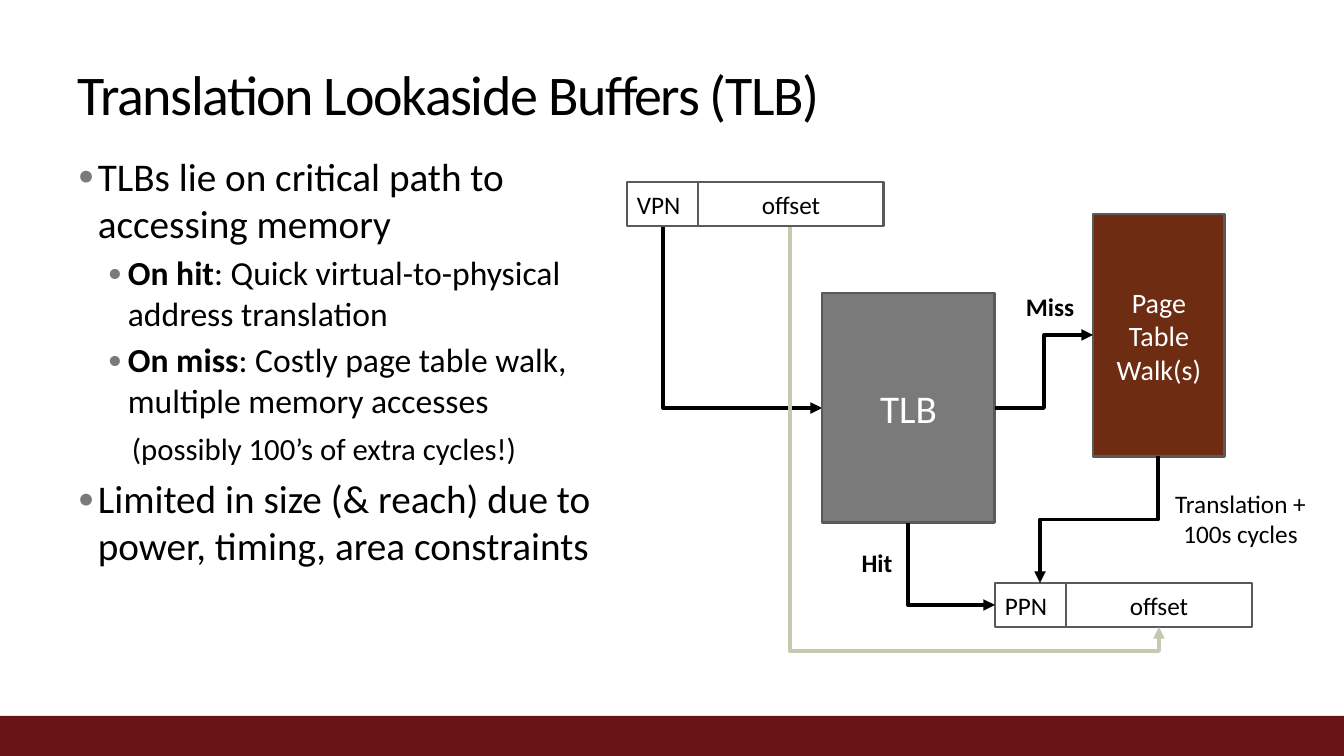
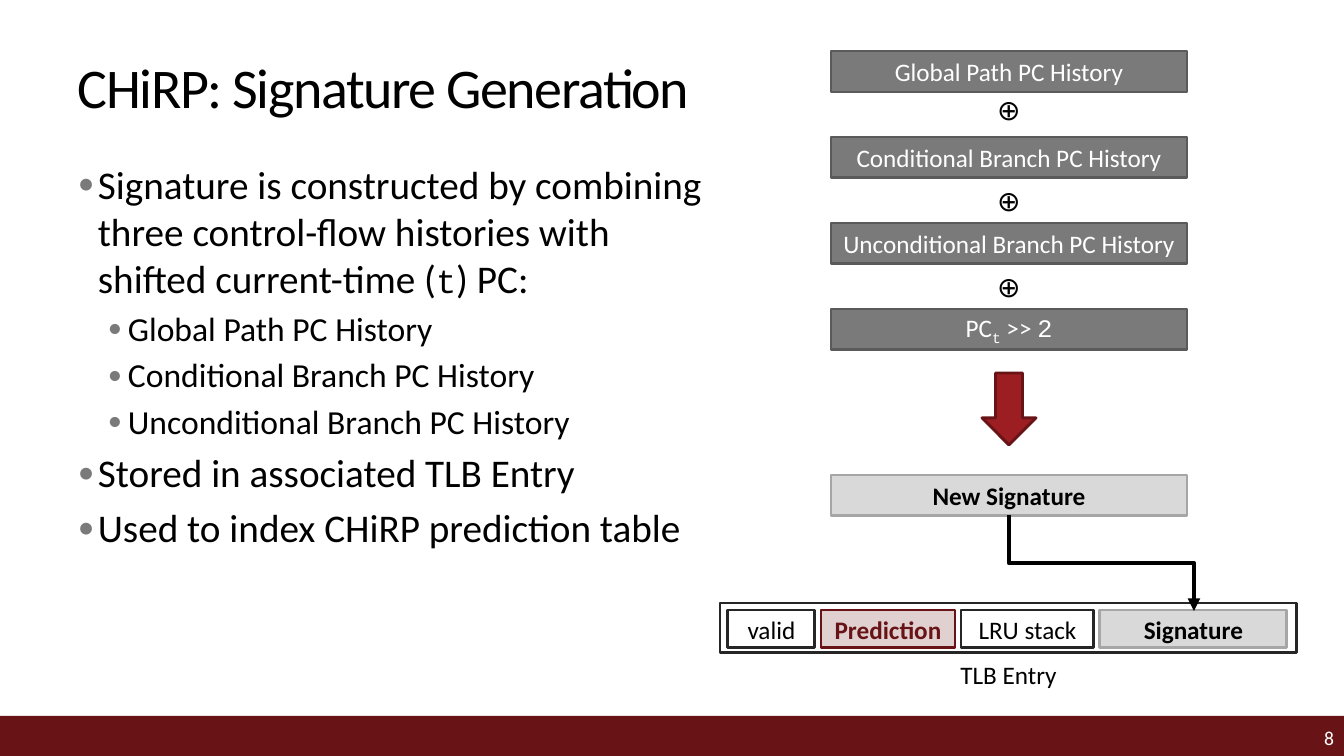
import pptx
import pptx.util
import pptx.dml.color
import pptx.enum.shapes
import pptx.enum.text
import pptx.oxml.ns
from lxml import etree

SCALE = 914400 / 100.8
WIDE, HIGH = 1344, 756
FONT, MONO = "Calibri", "Courier New"
EDGE = 2.08
LEFT = 68
INK = {
    "black": "000000",
    "white": "FFFFFF",
    "band": "681417",
    "gray": "7A7A7A",
    "edge": "5A5A5A",
    "rust": "6E2C12",
    "sand": "C8C8B1",
    "red": "9D1E22",
    "pale": "D9D9D9",
    "rim": "A6A6A6",
    "dark": "262626",
}
SHAPE = pptx.enum.shapes.MSO_SHAPE
ALIGN = pptx.enum.text.PP_ALIGN
MIDDLE = pptx.enum.text.MSO_ANCHOR.MIDDLE
qn = pptx.oxml.ns.qn
Pt = pptx.util.Pt


def px(n):
    return round(n * SCALE)


def hue(name):
    return pptx.dml.color.RGBColor.from_string(INK[name])


def child(node, tag, **attrs):
    return etree.SubElement(node, qn(tag), attrs)


def style(para, size, color="black", bold=False, align=ALIGN.LEFT):
    para.alignment = align
    font = para.font
    font.name, font.size, font.bold = FONT, Pt(size), bold
    font.color.rgb = hue(color)


def fill_runs(para, parts):
    if isinstance(parts, str):
        parts = [(parts, "")]
    for text, mark in parts:
        run = para.add_run()
        run.text = text
        if mark == "bold":
            run.font.bold = True
        elif mark in ("mono", "sub", "code"):
            run.font.name = MONO
            if mark == "code":
                run.font.size = Pt(24)
            elif mark == "sub":
                run.font._element.set("baseline", "-25000")


def label(slide, box, text, size=18, color="black", bold=False, align=ALIGN.CENTER):
    frame = slide.shapes.add_textbox(*map(px, box)).text_frame
    frame.word_wrap = True
    para = frame.paragraphs[0]
    fill_runs(para, text)
    style(para, size, color, bold, align)
    return frame


def block(slide, box, lines=(), fill="white", edge="edge", color="black", size=18,
          bold=False, align=ALIGN.CENTER, kind=SHAPE.RECTANGLE):
    shape = slide.shapes.add_shape(kind, *map(px, box))
    shape.shadow.inherit = False
    shape.fill.solid()
    shape.fill.fore_color.rgb = hue(fill)
    if edge:
        shape.line.color.rgb = hue(edge)
        shape.line.width = Pt(EDGE)
    else:
        shape.line.fill.background()
    frame = shape.text_frame
    frame.vertical_anchor = MIDDLE
    for i, text in enumerate(lines):
        para = frame.add_paragraph() if i else frame.paragraphs[0]
        fill_runs(para, text)
        style(para, size, color, bold, align)
    return shape


def elbow(slide, start, end, down=True, mid=0.5, corner=False, color="black", width=2.75):
    (x1, y1), (x2, y2) = start, end
    turn = 0
    if down:
        cx, cy = (x1 + x2) / 2, (y1 + y2) / 2
        half, rise = abs(y2 - y1) / 2, abs(x2 - x1) / 2
        turn = 270 if x2 > x1 else 90
        side = half if turn == 270 else -half
        x1, x2, y1, y2 = cx + side, cx - side, cy - rise, cy + rise
    link = slide.shapes.add_connector(
        pptx.enum.shapes.MSO_CONNECTOR.ELBOW, px(x1), px(y1), px(x2), px(y2))
    link.line.color.rgb = hue(color)
    link.line.width = Pt(width)
    props = link._element.spPr
    if turn:
        props.find(qn("a:xfrm")).set("rot", str(turn * 60000))
    geom = props.find(qn("a:prstGeom"))
    if corner:
        geom.set("prst", "bentConnector2")
    elif mid != 0.5:
        child(geom.find(qn("a:avLst")), "a:gd", name="adj1", fmla=f"val {round(mid * 100000)}")
    child(props.find(qn("a:ln")), "a:tailEnd", type="triangle")
    child(props, "a:effectLst")


def base(deck, title, height):
    slide = deck.slides.add_slide(deck.slide_layouts[6])
    block(slide, (0, 716, WIDE, 40), fill="band", edge=None)
    frame = label(slide, (LEFT, 37, 1243, height), title, 40, align=ALIGN.LEFT)
    frame.vertical_anchor = MIDDLE
    frame.paragraphs[0].runs[0].font._element.set("spc", "-100")
    return slide


def body(slide, box, items):
    frame = slide.shapes.add_textbox(*map(px, box)).text_frame
    frame.word_wrap = True
    for i, (level, text) in enumerate(items):
        para = frame.add_paragraph() if i else frame.paragraphs[0]
        size, left, gap = ((28, 20, 5.5), (24, 50, 4.5), (22, 54, 7))[level]
        props = para._p.get_or_add_pPr()
        props.set("marL", str(px(left)))
        if level < 2:
            props.set("indent", str(px(-20)))
            child(child(props, "a:buClr"), "a:srgbClr", val=INK["gray"])
            child(props, "a:buSzPct", val="85000")
            child(props, "a:buFont", typeface=FONT)
            child(props, "a:buChar", char="•")
        else:
            child(props, "a:buNone")
        if i:
            para.space_before = Pt(gap)
        fill_runs(para, text)
        style(para, size)


def address(slide, x, y, name):
    block(slide, (x, y, 91, 44), [name], align=ALIGN.LEFT)
    block(slide, (x + 71, y, 186, 44), ["offset"])


def lookup(slide, box):
    left, top = box

    def at(x, y, *size):
        return (left + x, top + y, *size)

    elbow(slide, at(36, 45), at(195, 226), corner=True)
    address(slide, *at(368, 401), "PPN")
    block(slide, at(195, 111, 173, 230), ["TLB"], "gray", color="white", size=28)
    block(slide, at(466, 32, 132, 243), ["Page Table", "Walk(s)"], "rust", color="white", size=20)
    elbow(slide, at(281, 341), at(368, 423), corner=True)
    elbow(slide, at(368, 226), at(466, 153), down=False)
    elbow(slide, at(531, 274), at(413, 401))
    label(slide, at(211, 360, 78, 40), "Hit", bold=True)
    label(slide, at(384, 104, 78, 40), "Miss", bold=True)
    label(slide, at(517, 301, 193, 72), "Translation + 100s cycles")
    elbow(slide, at(163, 45), at(532, 445), mid=1.06, color="sand")
    address(slide, left, top, "VPN")


def stack(slide, box):
    left, top, width, height = box
    parts = [
        "Global Path PC History",
        "Conditional Branch PC History",
        "Unconditional Branch PC History",
        [("PC", ""), ("t", "sub"), (" >> ", ""), ("2", "mono")],
    ]
    for i, text in enumerate(parts):
        block(slide, (left, top + 86 * i, width, height), [text], "gray", color="white")
    for y in (37, 128, 214):
        label(slide, (left + (width - 84) / 2, top + y, 84, 44), "⊕", 20)
    block(slide, (left + (width - 54) / 2, top + 322, 54, 72), fill="red", edge="band",
          kind=SHAPE.DOWN_ARROW)
    block(slide, (left, top + 424, width, height), ["New Signature"], "pale", "rim", bold=True)


def entry(slide, box):
    left, top, width, height = box
    block(slide, box, edge="dark")
    cells = [
        ("valid", 87, "white", "dark", "black", False),
        ("Prediction", 134, "band", "band", "band", True),
        ("LRU stack", 133, "white", "dark", "black", False),
        ("Signature", 187, "pale", "rim", "black", True),
    ]
    x = left + 8
    for text, size, fill, edge, color, bold in cells:
        cell = block(slide, (x, top + 7, size, 38), [text], fill, edge, color, bold=bold)
        if fill == "band":
            tint = cell._element.spPr.find(qn("a:solidFill")).find(qn("a:srgbClr"))
            child(tint, "a:alpha", val="20000")
        x += size + 6
    label(slide, (left + (width - 174) / 2, top + height + 1, 174, 40), "TLB Entry")


def buffers(deck):
    slide = base(deck, "Translation Lookaside Buffers (TLB)", 113)
    body(slide, (LEFT, 147, 550, 537), [
        (0, "TLBs lie on critical path to accessing memory"),
        (1, [("On hit", "bold"), (": Quick virtual-to-physical address translation", "")]),
        (1, [("On miss", "bold"), (": Costly page table walk, multiple memory accesses", "")]),
        (2, "(possibly 100’s of extra cycles!)"),
        (0, "Limited in size (& reach) due to power, timing, area constraints"),
    ])
    lookup(slide, (627, 182))


def signature(deck):
    slide = base(deck, "CHiRP: Signature Generation", 98)
    body(slide, (LEFT, 155, 652, 477), [
        (0, [("Signature is constructed by combining three control-flow histories "
              "with shifted current-time (", ""), ("t", "code"), (") PC:", "")]),
        (1, "Global Path PC History"),
        (1, "Conditional Branch PC History"),
        (1, "Unconditional Branch PC History"),
        (0, "Stored in associated TLB Entry"),
        (0, "Used to index CHiRP prediction table"),
    ])
    page = label(slide, (1187, 720, 157, 36), "8", 14, "white", align=ALIGN.RIGHT)
    page.vertical_anchor = MIDDLE
    stack(slide, (831, 51, 356, 41))
    entry(slide, (720, 603, 577, 50))
    elbow(slide, (1009, 515), (1194, 611), width=3)


def main():
    deck = pptx.Presentation()
    deck.slide_width, deck.slide_height = px(WIDE), px(HIGH)
    buffers(deck)
    signature(deck)
    deck.save("out.pptx")


if __name__ == "__main__":
    main()
